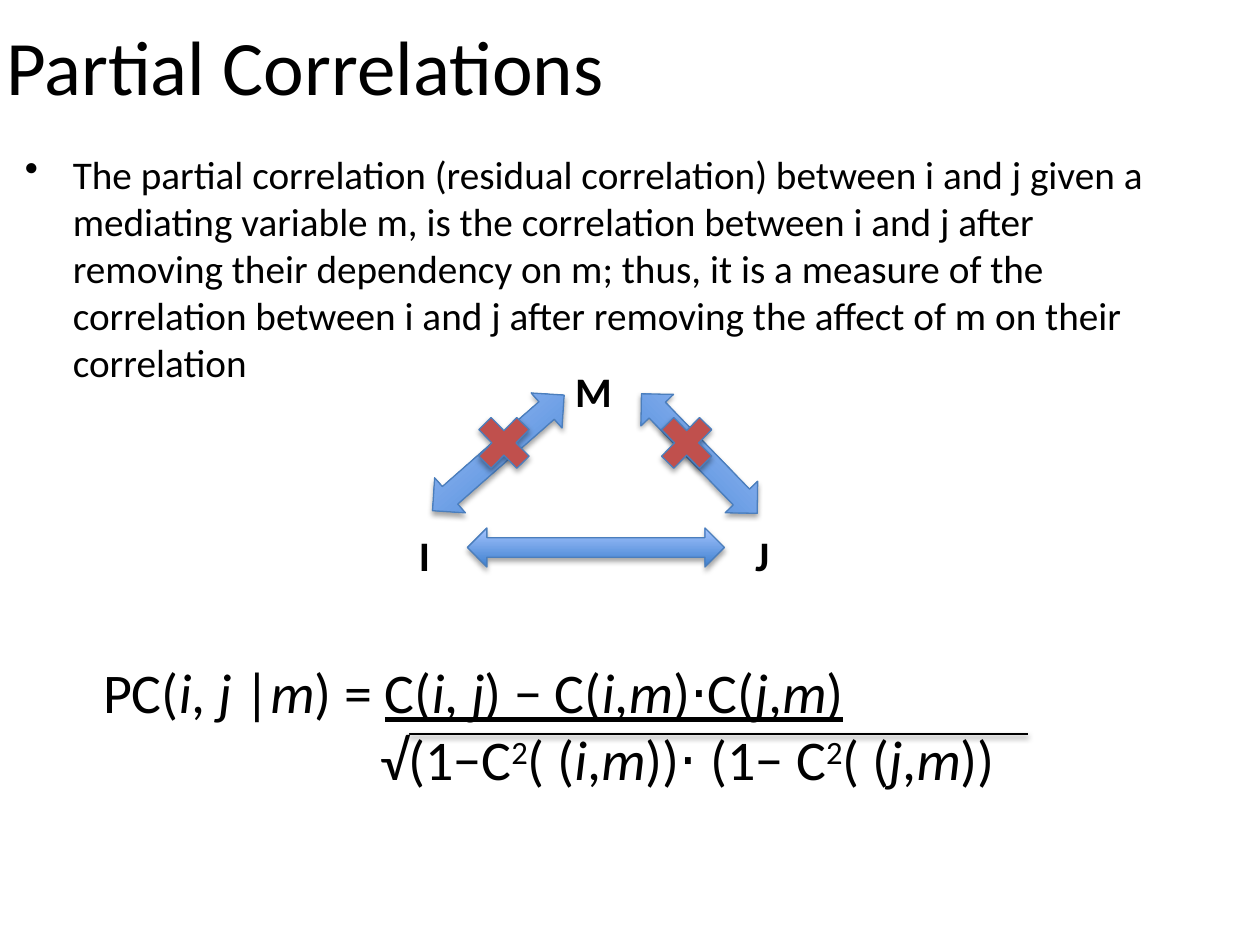
from lxml.etree import SubElement
from pptx import Presentation
from pptx.dml.color import RGBColor
from pptx.enum.shapes import MSO_SHAPE as Shape
from pptx.enum.text import MSO_ANCHOR as Anchor, PP_ALIGN as Align
from pptx.oxml.ns import qn
from pptx.util import Inches, Pt

BLACK = RGBColor(0x00, 0x00, 0x00)
OUTLINE = RGBColor(0x4B, 0x7E, 0xBC)
ARROW_DARK = RGBColor(0x3F, 0x80, 0xCE)
ARROW_LIGHT = RGBColor(0xA4, 0xC4, 0xFF)
RED = RGBColor(0xC0, 0x50, 0x4D)
FONT = "Calibri"

TITLE = "Partial Correlations"
DEFINITION = (
    "The partial correlation (residual correlation) between i and j given a "
    "mediating variable m, is the correlation between i and j after removing "
    "their dependency on m; thus, it is a measure of the correlation between "
    "i and j after removing the affect of m on their correlation"
)
NODES = [("M", 4.71, 3.1), ("I", 3.37, 4.4), ("J", 6.05, 4.4)]
ARROWS = [
    (3.26, 3.41, 1.39, 0.37, 318.7),
    (4.89, 3.42, 1.32, 0.36, 45.9),
    (3.71, 4.19, 2.04, 0.31, 0),
]
CROSS_LEFTS = [3.71, 5.16]
LEFT_SIDE = "PC(*i*, *j* |*m*) = "
NUMERATOR = "C(*i*, *j*) − C(*i*,*m*)⋅C(*j*,*m*)"
DENOMINATOR = "√(1−C^2^( (*i*,*m*))⋅ (1− C^2^( (*j*,*m*))"


def style(paragraph, size, align=Align.LEFT, bold=False):
    paragraph.alignment = align
    font = paragraph.font
    font.name, font.size, font.bold = FONT, Pt(size), bold
    font.color.rgb = BLACK


def add_text(slide, left, top, width, height):
    box = slide.shapes.add_textbox(*map(Inches, (left, top, width, height)))
    box.text_frame.word_wrap = True
    return box.text_frame


def add_math(paragraph, markup, underline=False):
    for i, chunk in enumerate(markup.split("*")):
        for j, text in enumerate(chunk.split("^")):
            if text:
                run = paragraph.add_run()
                run.text = text
                run.font.italic = i % 2 == 1
                run.font.underline = underline
                if j % 2:
                    run.font._element.set("baseline", "30000")


def add_shadowed(slide, kind, left, top, width, height, line=OUTLINE):
    shape = slide.shapes.add_shape(kind, *map(Inches, (left, top, width, height)))
    shape.shadow.inherit = False
    shape.line.color.rgb = line
    shape.line.width = Pt(0.75)
    effects = shape._element.spPr.find(qn("a:effectLst"))
    shadow = SubElement(effects, qn("a:outerShdw"), blurRad=str(Pt(3.1)),
                        dist=str(Pt(1.8)), dir="5400000", rotWithShape="0")
    color = SubElement(shadow, qn("a:srgbClr"), val=str(BLACK))
    SubElement(color, qn("a:alpha"), val="35000")
    return shape


def add_definition(slide):
    paragraph = add_text(slide, 0.1, 1.14, 9.43, 1.41).paragraphs[0]
    paragraph.text = DEFINITION
    style(paragraph, 22.4)
    paragraph.space_before = Pt(4.5)
    props = paragraph._p.get_or_add_pPr()
    props.set("marL", str(Inches(0.38)))
    props.set("indent", str(Inches(-0.38)))
    bullet = props.makeelement(qn("a:buChar"), {"char": "•"})
    props.find(qn("a:defRPr")).addprevious(bullet)


def add_formula(slide):
    frame = add_text(slide, 0.72, 5.17, 7.63, 1.18)
    top_line, bottom_line = frame.paragraphs[0], frame.add_paragraph()
    for line in (top_line, bottom_line):
        style(line, 32)
    add_math(top_line, LEFT_SIDE)
    add_math(top_line, NUMERATOR, underline=True)
    add_math(bottom_line, DENOMINATOR)
    bottom_line._p.get_or_add_pPr().set("marL", str(Inches(2.2)))


def add_diagram(slide):
    for label, x, y in NODES:
        frame = add_text(slide, x - 0.25, y - 0.25, 0.5, 0.5)
        frame.vertical_anchor = Anchor.MIDDLE
        frame.paragraphs[0].text = label
        style(frame.paragraphs[0], 24, Align.CENTER, bold=True)
    for *place, angle in ARROWS:
        arrow = add_shadowed(slide, Shape.LEFT_RIGHT_ARROW, *place)
        arrow.rotation = angle
        arrow.fill.gradient()
        arrow.fill.gradient_angle = 90
        for stop, color in zip(arrow.fill.gradient_stops, (ARROW_DARK, ARROW_LIGHT)):
            stop.color.rgb = color
    for left in CROSS_LEFTS:
        cross = add_shadowed(slide, Shape.MATH_MULTIPLY, left, 3.22, 0.58, 0.59)
        cross.fill.solid()
        cross.fill.fore_color.rgb = RED


def main():
    deck = Presentation()
    deck.slide_width, deck.slide_height = Inches(10), Inches(7.5)
    slide = deck.slides.add_slide(deck.slide_layouts[5])

    title = slide.shapes.title
    title.left, title.top = Inches(0), Inches(-0.11 + 0.11)
    title.width, title.height = Inches(6.98), Inches(1.03)
    title.text_frame.margin_left = Inches(0.05)
    title.text_frame.vertical_anchor = Anchor.MIDDLE
    title.text_frame.text = TITLE
    style(title.text_frame.paragraphs[0], 44)

    add_definition(slide)
    add_formula(slide)
    add_diagram(slide)
    root_bar = add_shadowed(slide, Shape.MATH_MINUS, 2.37, 5.8, 6.67, 0.05, BLACK)
    root_bar.fill.solid()
    root_bar.fill.fore_color.rgb = BLACK
    deck.save("out.pptx")


if __name__ == "__main__":
    main()
